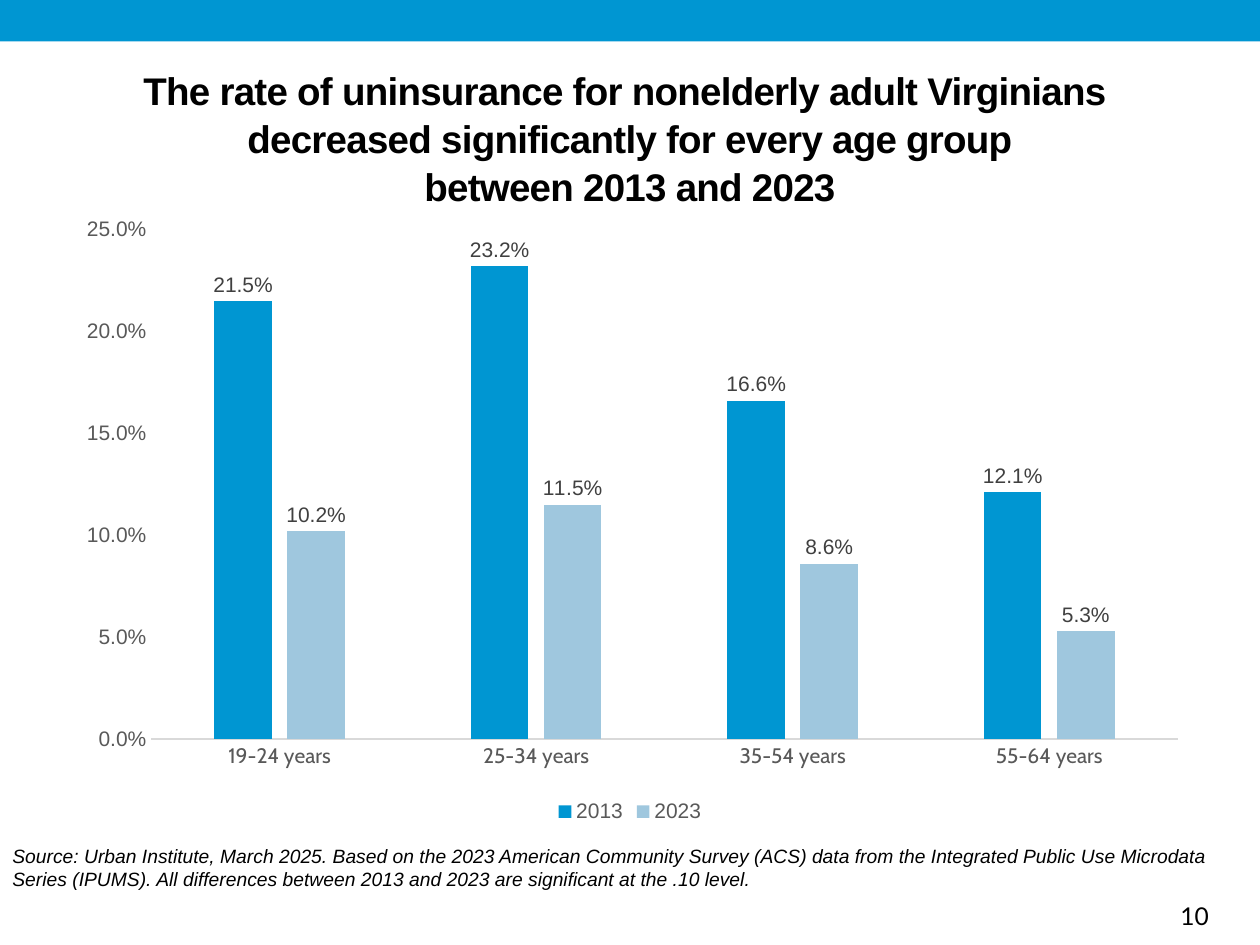
from lxml import etree
from pptx import Presentation
from pptx.chart.data import CategoryChartData
from pptx.dml.color import RGBColor
from pptx.enum.chart import XL_CHART_TYPE, XL_LABEL_POSITION, XL_LEGEND_POSITION, XL_TICK_MARK
from pptx.enum.shapes import MSO_SHAPE
from pptx.enum.text import MSO_ANCHOR, PP_ALIGN
from pptx.oxml.ns import qn
from pptx.util import Inches, Pt

COLUMNS = XL_CHART_TYPE.COLUMN_CLUSTERED
OUTSIDE_END = XL_LABEL_POSITION.OUTSIDE_END
BOTTOM = XL_LEGEND_POSITION.BOTTOM
NO_TICKS = XL_TICK_MARK.NONE

BLACK = RGBColor(0x00, 0x00, 0x00)
BLUE = RGBColor(0x00, 0x96, 0xD2)
PALE_BLUE = RGBColor(0x9F, 0xC7, 0xDE)
LABEL_GREY = RGBColor(0x40, 0x40, 0x40)
AXIS_GREY = RGBColor(0x59, 0x59, 0x59)
LINE_GREY = RGBColor(0xD9, 0xD9, 0xD9)

TITLE_LINES = [
    "The rate of uninsurance for nonelderly adult Virginians ",
    "decreased significantly for every age group",
    "between 2013 and 2023",
]
AGE_GROUPS = ["19-24 years", "25-34 years", "35-54 years", "55-64 years"]
RATES = [
    ("2013", BLUE, [0.215, 0.232, 0.166, 0.121]),
    ("2023", PALE_BLUE, [0.102, 0.115, 0.086, 0.053]),
]
PERCENT = "0.0%"
PLOT_AREA = {"x": 0.078, "y": 0.041, "w": 0.905, "h": 0.817}
SOURCE = (
    "Source: Urban Institute, March 2025. Based on the 2023 American Community Survey (ACS) data "
    "from the Integrated Public Use Microdata Series (IPUMS). All differences between 2013 and 2023 "
    "are significant at the .10 level."
)
PAGE_NUMBER = "10"


def style_font(font, size, color, name="Arial"):
    font.size = Pt(size)
    font.name = name
    font.color.rgb = color


def add_text(page, text, left, top, width, height, size, name="Arial"):
    box = page.shapes.add_textbox(Inches(left), Inches(top), Inches(width), Inches(height))
    box.text_frame.word_wrap = True
    para = box.text_frame.paragraphs[0]
    para.text = text
    style_font(para.font, size, BLACK, name)
    return para


def add_band(page):
    band = page.shapes.add_shape(MSO_SHAPE.RECTANGLE, 0, 0, Inches(10), Inches(0.33))
    band.shadow.inherit = False
    band.fill.solid()
    band.fill.fore_color.rgb = BLUE
    band.line.fill.background()


def fill_title(title):
    title.left, title.top = Inches(0.5), Inches(0.51)
    title.width, title.height = Inches(9), Inches(1.17)
    frame = title.text_frame
    frame.margin_left = frame.margin_right = frame.margin_top = frame.margin_bottom = 0
    frame.vertical_anchor = MSO_ANCHOR.TOP
    frame.word_wrap = True
    para = frame.paragraphs[0]
    para.text = "\v".join(TITLE_LINES)
    para.alignment = PP_ALIGN.CENTER
    para.line_spacing = 1.05
    style_font(para.font, 22, BLACK)
    para.font.bold = True
    for span in para.runs:
        span.font._element.set("spc", "-40")


def place_plot_area(chart):
    """Fix the inner plot area as fractions of the chart frame."""
    plot_area = chart._chartSpace.chart.plotArea
    for old in plot_area.findall(qn("c:layout")):
        plot_area.remove(old)
    layout = etree.Element(qn("c:layout"))
    manual = etree.SubElement(layout, qn("c:manualLayout"))
    settings = {"layoutTarget": "inner", "xMode": "edge", "yMode": "edge", **PLOT_AREA}
    for tag, value in settings.items():
        etree.SubElement(manual, qn(f"c:{tag}")).set("val", str(value))
    plot_area.insert(0, layout)


def add_rate_chart(page):
    data = CategoryChartData(number_format=PERCENT)
    data.categories = AGE_GROUPS
    for year, _, values in RATES:
        data.add_series(year, values)
    chart = page.shapes.add_chart(
        COLUMNS, Inches(0.5), Inches(1.62), Inches(9), Inches(4.95), data
    ).chart
    style_font(chart.font, 10, BLACK, "Cabin")
    chart.has_title = False
    chart.has_legend = True
    chart.legend.position = BOTTOM
    chart.legend.include_in_layout = False
    style_font(chart.legend.font, 12, AXIS_GREY)

    for axis, name in ((chart.category_axis, "Cabin"), (chart.value_axis, "Arial")):
        axis.major_tick_mark = axis.minor_tick_mark = NO_TICKS
        axis.has_major_gridlines = False
        style_font(axis.tick_labels.font, 12, AXIS_GREY, name)
    chart.category_axis.format.line.color.rgb = LINE_GREY
    chart.category_axis.format.line.width = Pt(0.75)
    rate_axis = chart.value_axis
    rate_axis.format.line.fill.background()
    rate_axis.minimum_scale, rate_axis.maximum_scale, rate_axis.major_unit = 0, 0.25, 0.05
    rate_axis.tick_labels.number_format = PERCENT
    rate_axis.tick_labels.number_format_is_linked = False

    plot = chart.plots[0]
    plot.vary_by_categories = False
    plot.gap_width, plot.overlap = 219, -27
    for series, (_, color, _) in zip(plot.series, RATES):
        series.format.fill.solid()
        series.format.fill.fore_color.rgb = color
        labels = series.data_labels
        labels.show_value = True
        labels.position = OUTSIDE_END
        labels.number_format = PERCENT
        labels.number_format_is_linked = False
        style_font(labels.font, 12, LABEL_GREY)
    place_plot_area(chart)


def main():
    deck = Presentation()
    deck.slide_width, deck.slide_height = Inches(10), Inches(7.5)
    page = deck.slides.add_slide(deck.slide_layouts[5])
    add_band(page)
    fill_title(page.shapes.title)
    add_rate_chart(page)
    add_text(page, SOURCE, 0, 6.65, 10, 0.47, 11).font.italic = True
    add_text(page, PAGE_NUMBER, 9.27, 7.1, 0.73, 0.34, 14, "Lato")
    deck.save("out.pptx")


if __name__ == "__main__":
    main()
